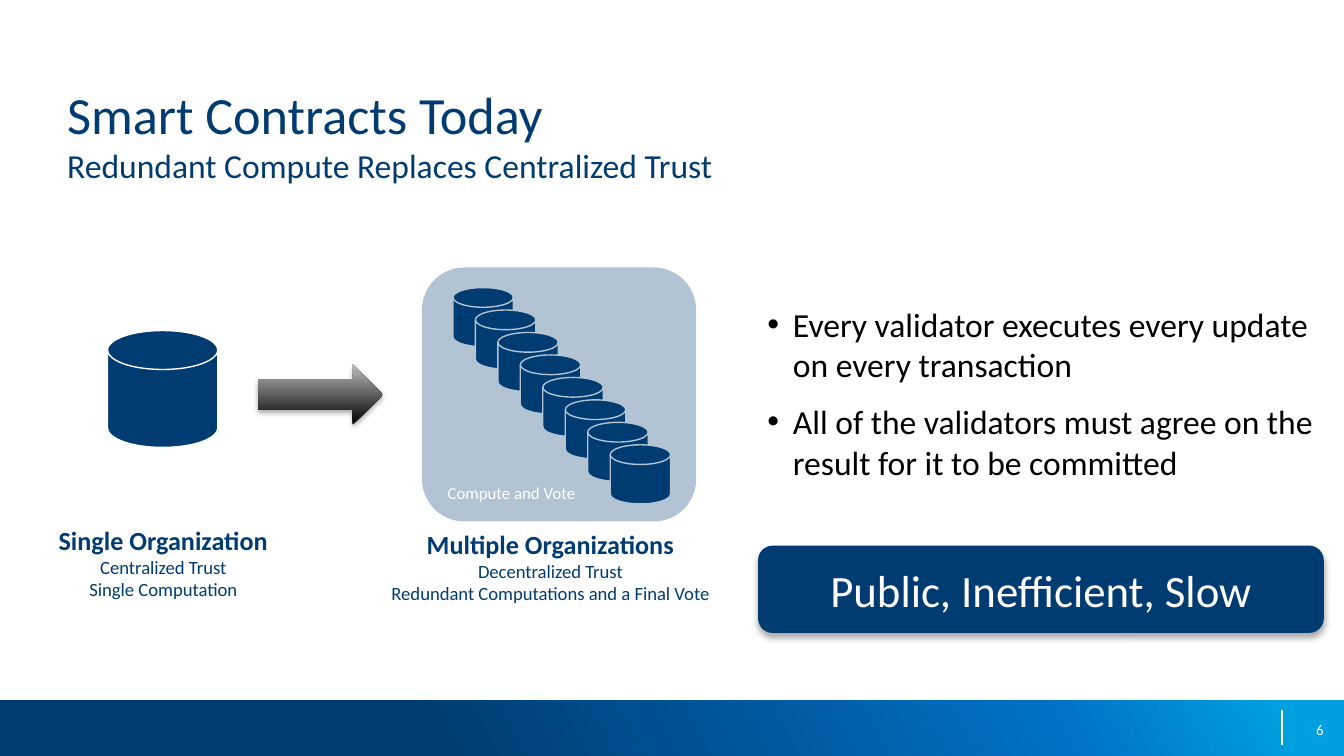
"""Build the slide on smart contracts and redundant compute."""
from lxml import etree
from pptx import Presentation
from pptx.dml.color import RGBColor
from pptx.enum.shapes import MSO_CONNECTOR, MSO_SHAPE
from pptx.enum.text import MSO_ANCHOR, MSO_AUTO_SIZE, PP_ALIGN
from pptx.oxml.ns import qn
from pptx.util import Inches, Pt

RECT, ROUNDED = MSO_SHAPE.RECTANGLE, MSO_SHAPE.ROUNDED_RECTANGLE
DISK, ARROW = MSO_SHAPE.FLOWCHART_MAGNETIC_DISK, MSO_SHAPE.RIGHT_ARROW
STRAIGHT, NO_FIT = MSO_CONNECTOR.STRAIGHT, MSO_AUTO_SIZE.NONE
TOP, MIDDLE, BOTTOM = MSO_ANCHOR.TOP, MSO_ANCHOR.MIDDLE, MSO_ANCHOR.BOTTOM
LEFT, CENTER, RIGHT = PP_ALIGN.LEFT, PP_ALIGN.CENTER, PP_ALIGN.RIGHT

FONT = "Calibri"
COLORS = {"navy": "003C71", "blue": "0071C5", "cyan": "009FDF",
          "white": "FFFFFF", "black": "000000", "silver": "BDBDBD"}

TITLE = [("Smart Contracts Today", 28),
         ("Redundant Compute Replaces Centralized Trust", 18)]
ORGANIZATIONS = [
    ((0.31, 3.9, 1.81, 0.57),
     ["Single Organization", "Centralized Trust", "Single Computation"]),
    ((2.75, 3.93, 2.69, 0.57),
     ["Multiple Organizations", "Decentralized Trust",
      "Redundant Computations and a Final Vote"]),
]
POINTS = ["Every validator executes every update on every transaction",
          "All of the validators must agree on the result for it to be committed"]
VOTE = "Compute and Vote"
VERDICT = "Public, Inefficient, Slow"
PAGE = "6"

VALIDATORS = 8
FIRST_VALIDATOR, LAST_VALIDATOR = (3.37, 2.14), (4.54, 3.31)
FOOTER_STOPS = [(32, "navy"), (78, "blue"), (95, "cyan")]
ARROW_STOPS = [(0, "black"), (100, "silver")]


def rgb(name):
    return RGBColor.from_string(COLORS[name])


def inches(box):
    return [Inches(length) for length in box]


def add_element(parent, tag, **attributes):
    return etree.SubElement(parent, qn(tag), {k: str(v) for k, v in attributes.items()})


def style(paragraph, size, color, align=LEFT, bold=False):
    paragraph.alignment = align
    font = paragraph.font
    font.name, font.size, font.bold = FONT, Pt(size), bold
    font.color.rgb = rgb(color)


def set_frame(frame, anchor=TOP, wrap=True, margin=0):
    frame.auto_size = NO_FIT
    frame.word_wrap, frame.vertical_anchor = wrap, anchor
    frame.margin_left = frame.margin_right = Inches(margin)
    frame.margin_top = frame.margin_bottom = Inches(margin / 2)


def place(shape, box):
    shape.left, shape.top, shape.width, shape.height = inches(box)


def add_shape(slide, kind, box, fill=None, line=None):
    shape = slide.shapes.add_shape(kind, *inches(box))
    shape.shadow.inherit = False
    if fill:
        shape.fill.solid()
        shape.fill.fore_color.rgb = rgb(fill)
    if line:
        shape.line.color.rgb = rgb(line)
        shape.line.width = Pt(0.75)
    else:
        shape.line.fill.background()
    return shape


def add_gradient(shape, stops, angle):
    gradient = etree.Element(qn("a:gradFill"), rotWithShape="1")
    stop_list = add_element(gradient, "a:gsLst")
    for position, color in stops:
        stop = add_element(stop_list, "a:gs", pos=position * 1000)
        add_element(stop, "a:srgbClr", val=COLORS[color])
    add_element(gradient, "a:lin", ang=angle * 60000, scaled=0)
    shape.element.spPr.find(qn("a:prstGeom")).addnext(gradient)


def add_shadow(shape, opacity, blur, distance):
    effects = shape.element.spPr.find(qn("a:effectLst"))
    shadow = add_element(effects, "a:outerShdw", blurRad=Pt(blur), dist=Pt(distance),
                         dir=90 * 60000, rotWithShape=0)
    color = add_element(shadow, "a:srgbClr", val=COLORS["black"])
    add_element(color, "a:alpha", val=opacity * 1000)


def add_footer(slide):
    bar = add_shape(slide, RECT, (0, 5.21, 10, 0.42))
    add_gradient(bar, FOOTER_STOPS, 331)
    divider = slide.shapes.add_connector(STRAIGHT, *inches((9.54, 5.28, 9.54, 5.54)))
    divider.line.color.rgb = rgb("white")
    divider.line.width = Pt(0.75)
    add_element(divider.element.spPr, "a:effectLst")
    page = slide.shapes.add_textbox(*inches((7.52, 5.28, 2.33, 0.3))).text_frame
    set_frame(page, MIDDLE)
    page.text = PAGE
    style(page.paragraphs[0], 8, "white", RIGHT)


def fill_title(title):
    place(title, (0.5, 0.61, 9, 1.02))
    set_frame(title.text_frame)
    paragraph = title.text_frame.paragraphs[0]
    style(paragraph, TITLE[0][1], "navy")
    for index, (text, size) in enumerate(TITLE):
        if index:
            paragraph.add_line_break()
        run = paragraph.add_run()
        run.text, run.font.size = text, Pt(size)


def fill_points(body):
    place(body, (5.71, 2.26, 4.08, 1.51))
    frame = body.text_frame
    set_frame(frame)
    frame.text = "\n".join(POINTS)
    for index, paragraph in enumerate(frame.paragraphs):
        properties = paragraph._p.get_or_add_pPr()
        properties.set("marL", str(Inches(0.19)))
        properties.set("indent", str(Inches(-0.19)))
        add_element(properties, "a:buChar", char="•")
        paragraph.space_before = Pt(9 if index else 0)
        style(paragraph, 18, "black")


def add_organization(slide, box, lines):
    frame = slide.shapes.add_textbox(*inches(box)).text_frame
    set_frame(frame, wrap=False)
    frame.text = "\n".join(lines)
    for index, paragraph in enumerate(frame.paragraphs):
        style(paragraph, 10 if index else 14, "navy", CENTER, bold=not index)


def add_diagram(slide):
    add_shape(slide, DISK, (0.8, 2.46, 0.82, 0.87), "navy", "white")
    for box, lines in ORGANIZATIONS:
        add_organization(slide, box, lines)
    for index in range(VALIDATORS):
        left, top = (first + (last - first) * index / (VALIDATORS - 1)
                     for first, last in zip(FIRST_VALIDATOR, LAST_VALIDATOR))
        add_shape(slide, DISK, (left, top, 0.45, 0.44), "navy", "white")
    group = add_shape(slide, ROUNDED, (3.14, 1.99, 2.04, 1.89), "navy")
    color = group.element.spPr.find(qn("a:solidFill"))[0]
    add_element(color, "a:alpha", val=30000)
    set_frame(group.text_frame, BOTTOM, margin=0.1)
    group.text_frame.text = VOTE
    style(group.text_frame.paragraphs[0], 9, "white")
    arrow = add_shape(slide, ARROW, (1.92, 2.71, 0.93, 0.45))
    add_gradient(arrow, ARROW_STOPS, 270)
    add_shadow(arrow, 35, 3.1, 1.8)


def add_verdict(slide):
    banner = add_shape(slide, ROUNDED, (5.64, 4.06, 4.21, 0.65), "navy")
    add_shadow(banner, 32, 3.5, 2.2)
    set_frame(banner.text_frame, MIDDLE, margin=0.1)
    banner.text_frame.text = VERDICT
    style(banner.text_frame.paragraphs[0], 24, "white", CENTER)


def main():
    deck = Presentation()
    deck.slide_width = Inches(10)
    deck.slide_height = deck.slide_width * 9 // 16
    slide = deck.slides.add_slide(deck.slide_layouts[1])
    add_footer(slide)
    fill_title(slide.shapes.title)
    add_diagram(slide)
    fill_points(slide.placeholders[1])
    add_verdict(slide)
    deck.save("out.pptx")


if __name__ == "__main__":
    main()
